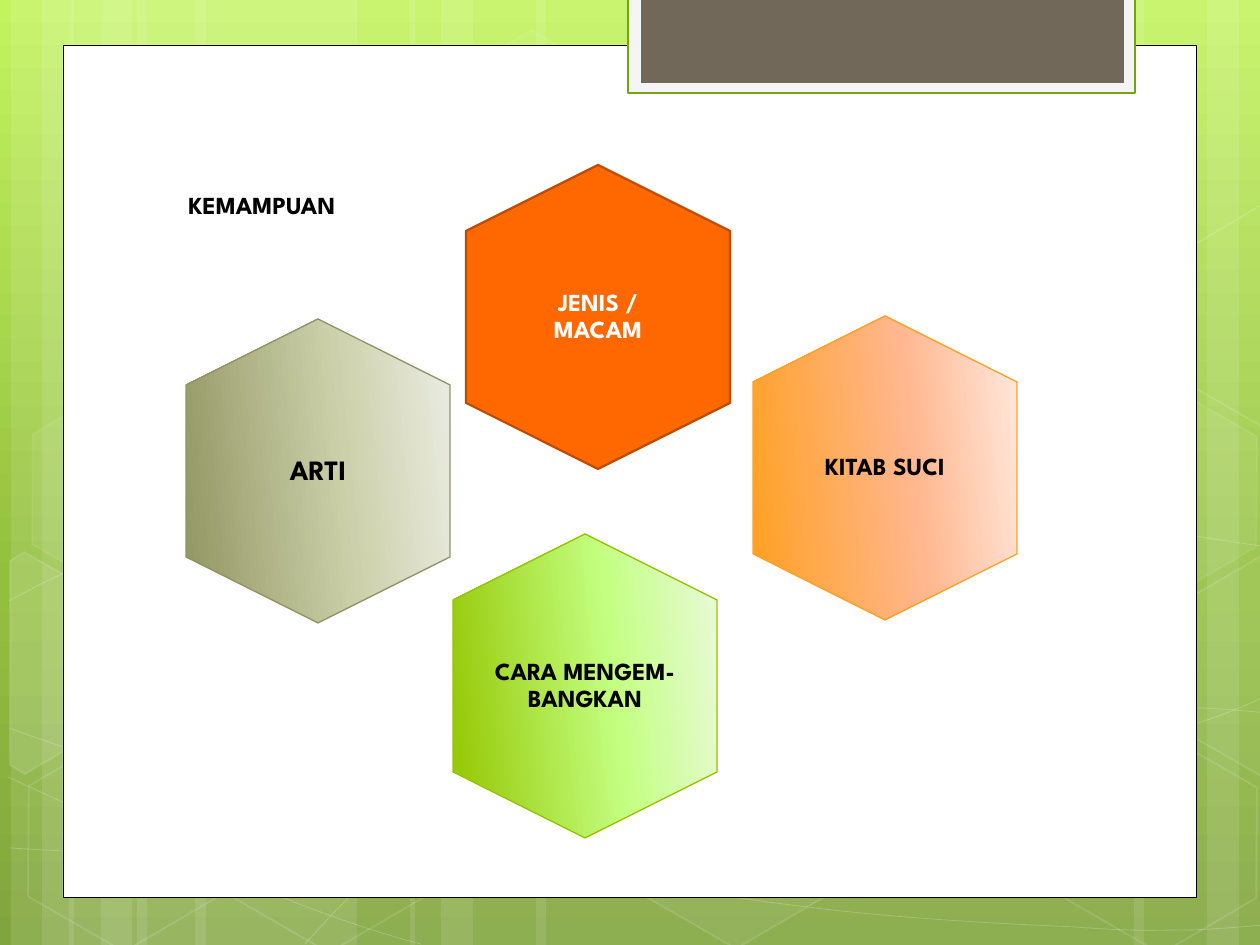
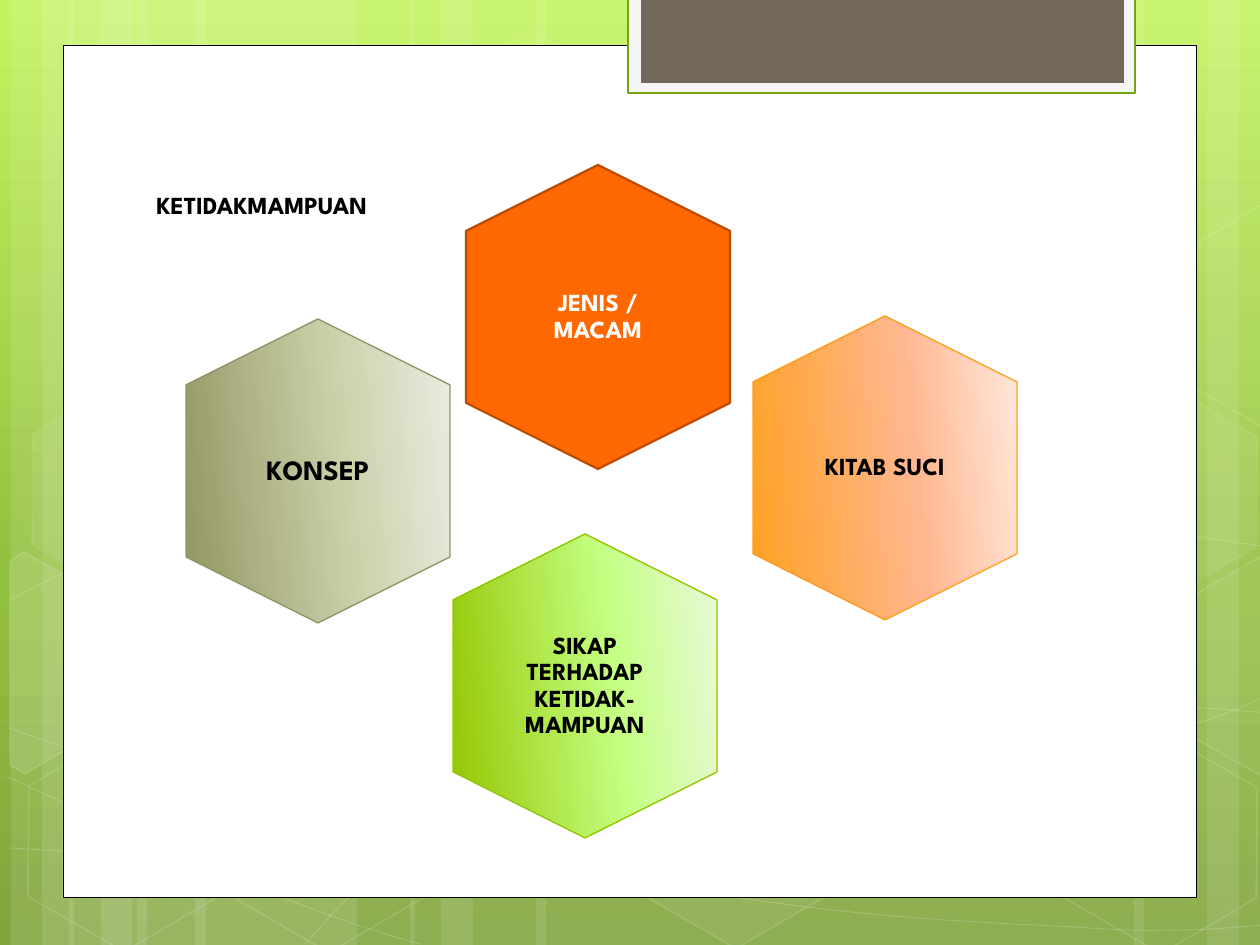
from dataclasses import dataclass

from lxml import etree
from pptx import Presentation
from pptx.dml.color import RGBColor
from pptx.enum import shapes, text
from pptx.oxml.ns import qn
from pptx.util import Emu, Pt

PX = 914400 / 126


@dataclass(frozen=True)
class Theme:
    font: str = "League Spartan"
    label_size: int = 14
    lead_size: int = 16
    white: str = "FFFFFF"
    black: str = "000000"
    frame: str = "F5F5F5"
    frame_line: str = "74A510"
    tab: str = "71685A"
    backdrop: tuple = ((0, "C3F35F"), (62, "93BF3F"), (100, "81A53E"))
    orange: str = "FF6700"
    orange_line: str = "BD4C00"
    olive: tuple = ((0, "EBECE3"), (40, "CDD1AB"), (100, "929663"))
    olive_line: str = "909465"
    peach: tuple = ((0, "FFE9DE"), (40, "FFB78F"), (100, "FFA021"))
    peach_line: str = "FEA022"
    green: tuple = ((0, "EAF9DA"), (40, "C4FF82"), (100, "94C600"))
    green_line: str = "94C600"


THEME = Theme()


@dataclass(frozen=True)
class Topic:
    """Look of one hexagon and its label; center is in px."""
    center: tuple
    fill: object
    line: str
    line_width: float = 0.75
    color: str = THEME.black
    size: int = THEME.label_size
    inset: int = 0


TOPICS = (
    Topic((598, 317), THEME.orange, THEME.orange_line, 1.25, THEME.white, inset=8),
    Topic((318, 471), THEME.olive, THEME.olive_line, size=THEME.lead_size),
    Topic((885, 468), THEME.peach, THEME.peach_line, inset=8),
    Topic((585, 686), THEME.green, THEME.green_line),
)
HEXAGON_SIZE = (304, 264)
LABEL_SIZE = (182, 209)
TITLE_BOX = (98, 116, 328, 181)

SLIDES = (
    ("KEMAMPUAN", ("JENIS / MACAM", "ARTI", "KITAB SUCI", "CARA MENGEM-BANGKAN")),
    ("KETIDAKMAMPUAN", ("JENIS / MACAM", "KONSEP", "KITAB SUCI",
                        "SIKAP TERHADAP KETIDAK-MAMPUAN")),
)

# Left edges of the full-height stripes, by stripe width
STRIPES = {
    220: (137, 195, 924),
    63: (11, 69, 410, 1207),
    105: (42, 101, 441, 1134),
    388: (536,),
}
# Left, top, fill opacity, line opacity
FAINT_HEXAGONS = (
    (421, 45, 4, 8), (626, 742, 6, 12), (14, 745, 0, 12), (18, 393, 7, 8),
    (219, 746, 0, 12), (1051, 747, 0, 12), (1051, 396, 7, 8),
)
# Outline and fill opacity of the hexagons cut off at the slide's edges
CUT_HEXAGONS = (
    (((10, 561), (24, 552), (121, 607), (120, 718), (25, 774), (10, 765)), 10),
    (((1167, 611), (1261, 556), (1271, 562), (1271, 772), (1263, 777), (1167, 722)), 4),
    (((1167, 261), (1261, 205), (1273, 212), (1271, 422), (1263, 427), (1167, 372)), 0),
)
# Start point, then two control points and an end point for each cubic segment
CURVES = (
    ((9, 848), (77, 852), (145, 856), (239, 854), (334, 853), (451, 851), (577, 838),
     (703, 825), (882, 801), (998, 777), (1113, 753), (1231, 716), (1269, 694)),
    ((9, 601), (45, 581), (82, 562), (152, 543), (224, 524), (326, 496), (437, 488),
     (549, 479), (685, 478), (824, 488), (963, 498), (1193, 537), (1269, 547)),
    ((8, 777), (160, 847), (311, 916), (421, 944)),
    ((9, 728), (48, 742), (88, 756), (161, 776), (234, 795), (344, 827), (450, 848),
     (554, 869), (687, 892), (791, 905), (896, 919), (1008, 924), (1075, 927),
     (1140, 932), (1158, 930), (1191, 930), (1223, 929), (1246, 926), (1269, 925)),
    ((305, 944), (328, 919), (350, 893), (381, 871), (411, 848), (454, 823), (489, 805),
     (524, 788), (546, 780), (592, 767), (638, 755), (722, 737), (766, 728),
     (811, 719), (818, 719), (857, 717), (896, 714), (958, 709), (1000, 708),
     (1045, 707), (1116, 708), (1116, 708), (1144, 708), (1173, 708), (1201, 708),
     (1223, 709), (1245, 711), (1256, 712), (1268, 713), (1264, 712), (1268, 713)),
)


def px(*lengths):
    return [Emu(round(length * PX)) for length in lengths]


def box_around(center, size):
    return (center[0] - size[0] / 2, center[1] - size[1] / 2, *size)


def fill_gradient(fill, owner, stops, angle):
    """Fill with (percent, colour) stops; the angle runs clockwise."""
    fill.gradient()
    fill.gradient_angle = 360 - angle
    stop_list = owner.element.find(f".//{qn('a:gsLst')}")
    for old_stop in list(stop_list):
        stop_list.remove(old_stop)
    for percent, color in stops:
        stop = etree.SubElement(stop_list, qn("a:gs"), pos=str(percent * 1000))
        etree.SubElement(stop, qn("a:srgbClr"), val=color)


def set_opacity(shape, part, percent):
    for color in shape.element.xpath(f"./p:spPr/{part}/a:srgbClr"):
        etree.SubElement(color, qn("a:alpha"), val=str(percent * 1000))


def style(shape, fill=None, line=None, width=1.0, fill_opacity=100, line_opacity=100):
    shape.shadow.inherit = False
    if isinstance(fill, tuple):
        fill_gradient(shape.fill, shape, fill, 84)
    elif fill and fill_opacity:
        shape.fill.solid()
        shape.fill.fore_color.rgb = RGBColor.from_string(fill)
    else:
        shape.fill.background()
    if line:
        shape.line.color.rgb = RGBColor.from_string(line)
        shape.line.width = Pt(width)
    else:
        shape.line.fill.background()
    if fill_opacity < 100:
        set_opacity(shape, "a:solidFill", fill_opacity)
    if line_opacity < 100:
        set_opacity(shape, "a:ln/a:solidFill", line_opacity)


def add_preset(slide, kind, box, rotation=0, **look):
    shape = slide.shapes.add_shape(kind, *px(*box))
    shape.rotation = rotation
    style(shape, **look)
    return shape


def add_outline(slide, points, close, **look):
    start, *rest = [px(*point) for point in points]
    builder = slide.shapes.build_freeform(*start)
    builder.add_line_segments(rest, close=close)
    shape = builder.convert_to_shape()
    style(shape, **look)
    return shape


def add_curve(slide, points, **look):
    """Draw the points as an outline, then join each three as one cubic segment."""
    outline = add_outline(slide, points, False, **look).element.find(f".//{qn('a:path')}")
    lines = outline.findall(qn("a:lnTo"))
    for first in range(0, len(lines), 3):
        segment = etree.SubElement(outline, qn("a:cubicBezTo"))
        for line in lines[first:first + 3]:
            segment.append(line[0])
            outline.remove(line)


def write_text(shape, words, color, size, inset):
    frame = shape.text_frame
    frame.text = words
    frame.word_wrap = True
    frame.auto_size = text.MSO_AUTO_SIZE.NONE
    frame.vertical_anchor = text.MSO_ANCHOR.MIDDLE
    (margin,) = px(inset)
    frame.margin_left = frame.margin_right = frame.margin_top = frame.margin_bottom = margin
    paragraph = frame.paragraphs[0]
    paragraph.alignment = text.PP_ALIGN.CENTER
    paragraph.line_spacing = 0.9
    font = paragraph.font
    font.name = THEME.font
    font.size = Pt(size)
    font.bold = True
    font.color.rgb = RGBColor.from_string(color)


def add_title(slide, words):
    title = slide.shapes.title
    title.left, title.top, title.width, title.height = px(*TITLE_BOX)
    write_text(title, words, THEME.black, THEME.label_size, 8)


def add_topic(slide, topic, words):
    add_preset(slide, shapes.MSO_SHAPE.HEXAGON, box_around(topic.center, HEXAGON_SIZE), 90,
               fill=topic.fill, line=topic.line, width=topic.line_width)
    label = slide.shapes.add_textbox(*px(*box_around(topic.center, LABEL_SIZE)))
    write_text(label, words, topic.color, topic.size, topic.inset)


def draw_backdrop(slide):
    rectangle = shapes.MSO_SHAPE.RECTANGLE
    white = THEME.white
    for width, lefts in STRIPES.items():
        for left in lefts:
            add_preset(slide, rectangle, (left, 0, width, 945), fill=white, fill_opacity=10)
    for curve in CURVES:
        add_curve(slide, curve, line=white, width=0.5, line_opacity=20)
    for left, top, fill_opacity, line_opacity in FAINT_HEXAGONS:
        hexagon = add_preset(slide, shapes.MSO_SHAPE.HEXAGON, (left, top, 220, 192), 30,
                             fill=white, line=white, fill_opacity=fill_opacity,
                             line_opacity=line_opacity)
        hexagon.adjustments[0] = 0.285
    for points, fill_opacity in CUT_HEXAGONS:
        add_outline(slide, points, True, fill=white, line=white,
                    fill_opacity=fill_opacity, line_opacity=12)
    add_preset(slide, rectangle, (63, 45, 1134, 853), fill=white, line=THEME.black, width=0.5)
    add_preset(slide, rectangle, (628, -3, 507, 96),
               fill=THEME.frame, line=THEME.frame_line, width=1.25)
    add_preset(slide, rectangle, (641, -3, 483, 86), fill=THEME.tab)


def prepare_layout(layout, slide):
    """Draw the backdrop on the slide, then move it to the layout all slides share."""
    for placeholder in list(layout.placeholders):
        if placeholder.placeholder_format.idx:
            layout.shapes.element.remove(placeholder.element)
    fill_gradient(layout.background.fill, layout, THEME.backdrop, 90)
    draw_backdrop(slide)
    for shape in list(slide.shapes):
        if not shape.is_placeholder:
            layout.shapes.element.append(shape.element)


def main():
    presentation = Presentation()
    presentation.slide_width, presentation.slide_height = px(1260, 945)
    layout = presentation.slide_layouts[5]
    slides = [presentation.slides.add_slide(layout) for _ in SLIDES]
    prepare_layout(layout, slides[0])
    for slide, (title, labels) in zip(slides, SLIDES):
        add_title(slide, title)
        for topic, words in zip(TOPICS, labels):
            add_topic(slide, topic, words)
    presentation.save("out.pptx")


if __name__ == "__main__":
    main()
